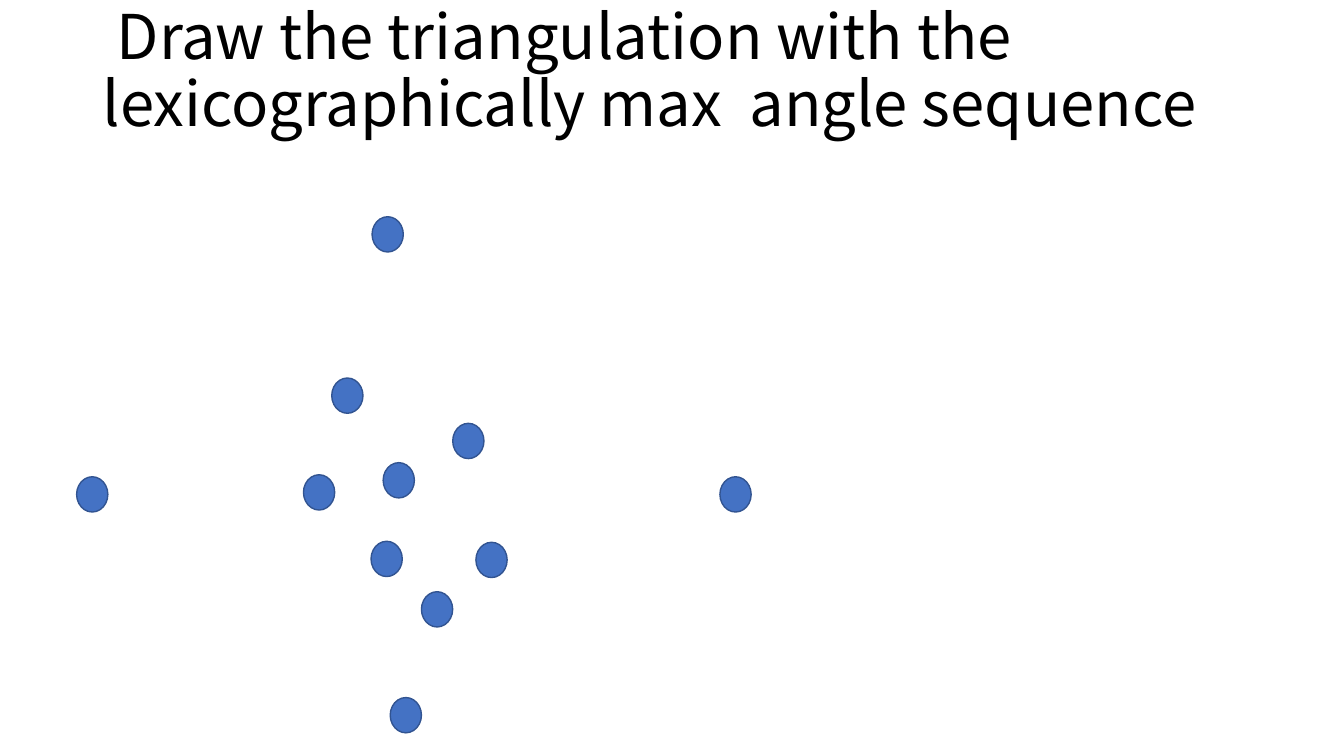
from pptx import Presentation
from pptx.dml.color import RGBColor
from pptx.enum.shapes import MSO_SHAPE
from pptx.enum.text import MSO_ANCHOR, MSO_AUTO_SIZE, PP_ALIGN
from pptx.util import Inches, Pt

OVAL = MSO_SHAPE.OVAL
MIDDLE = MSO_ANCHOR.MIDDLE
FIT = MSO_AUTO_SIZE.TEXT_TO_FIT_SHAPE
LEFT = PP_ALIGN.LEFT
BLACK = RGBColor(0x00, 0x00, 0x00)
BLUE = RGBColor(0x44, 0x72, 0xC4)
DARK_BLUE = RGBColor(0x32, 0x54, 0x91)
FONT = "Noto Sans CJK JP"

POINT_W, POINT_H = 0.31, 0.35
POINTS = [
    (0, 2.58), (2.93, 0), (6.38, 2.58), (2.25, 2.56), (2.53, 1.6),
    (3.73, 2.05), (3.04, 2.44), (2.92, 3.22), (3.11, 4.77),
    (3.96, 3.23), (3.42, 3.72),
]


def write_text(tf, text, size=44, color=BLACK, align=LEFT, spacing=0.9):
    """Fill a text frame with one formatted paragraph."""
    p = tf.paragraphs[0]
    p.text = text
    p.alignment = align
    p.line_spacing = spacing
    for r in p.runs:
        r.font.name = FONT
        r.font.size = Pt(size)
        r.font.color.rgb = color


def add_title(s, left, top, width, height):
    """Place the slide title in the given box."""
    sp = s.shapes.title
    sp.left, sp.top = Inches(left), Inches(top)
    sp.width, sp.height = Inches(width), Inches(height)
    tf = sp.text_frame
    tf.word_wrap = True
    tf.vertical_anchor = MIDDLE
    tf.auto_size = FIT
    write_text(tf, " Draw the triangulation with the \v"
                   "lexicographically max  angle sequence")


def add_point_set(s, left, top):
    """Draw the points to triangulate, offset from the given corner."""
    for x, y in POINTS:
        sp = s.shapes.add_shape(OVAL, Inches(left + x), Inches(top + y),
                                Inches(POINT_W), Inches(POINT_H))
        sp.shadow.inherit = False
        sp.fill.solid()
        sp.fill.fore_color.rgb = BLUE
        sp.line.color.rgb = DARK_BLUE
        sp.line.width = Pt(1)


def main():
    """Build and save the slide."""
    prs = Presentation()
    prs.slide_width, prs.slide_height = Inches(13.33), Inches(7.5)
    s = prs.slides.add_slide(prs.slide_layouts[5])
    add_title(s, 0.92, 0, 11.5, 1.45)
    add_point_set(s, 0.76, 2.15)
    prs.save("out.pptx")


if __name__ == "__main__":
    main()
